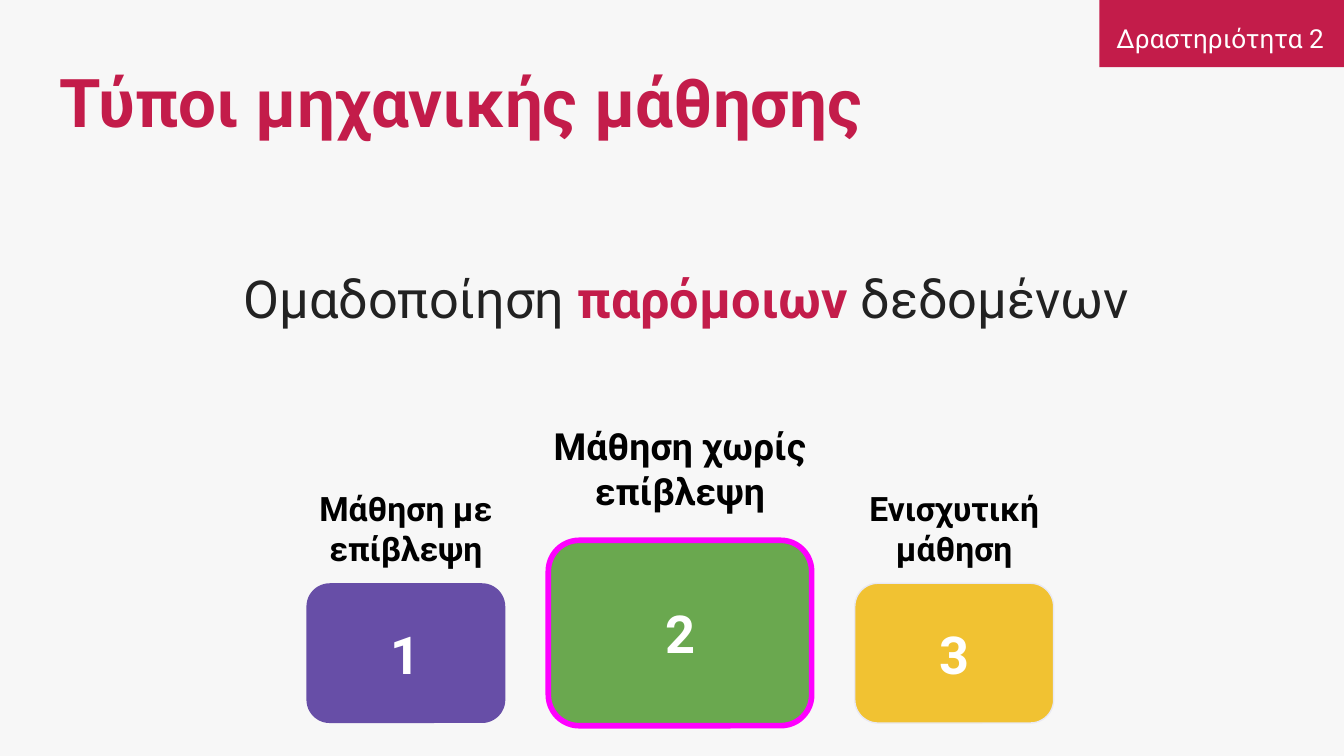
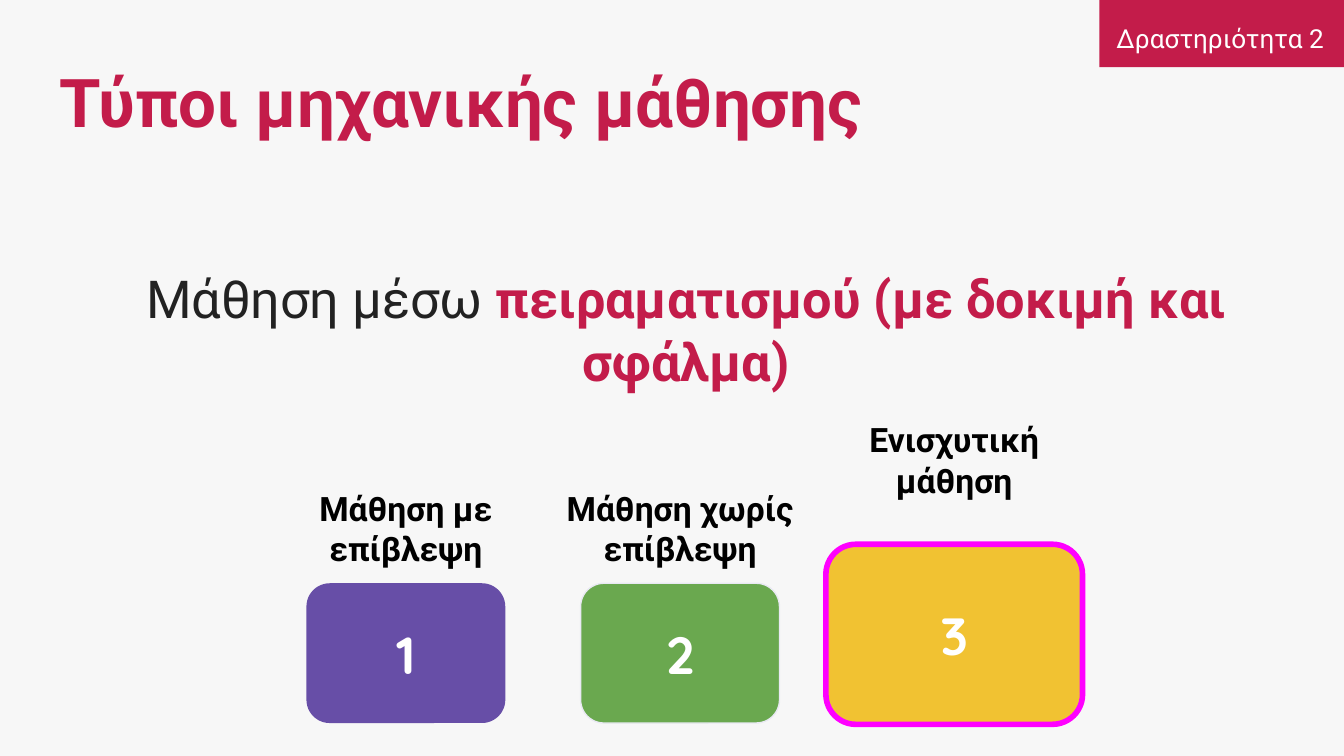
from pptx import Presentation
from pptx.dml.color import RGBColor
from pptx.enum.shapes import MSO_SHAPE
from pptx.enum.text import MSO_ANCHOR, MSO_AUTO_SIZE, PP_ALIGN
from pptx.util import Inches, Pt

# Colours and fonts
PAPER = RGBColor(0xF7, 0xF7, 0xF7)
CRIMSON = RGBColor(0xC3, 0x1C, 0x4A)
INK = RGBColor(0x22, 0x22, 0x22)
BLACK = RGBColor(0x00, 0x00, 0x00)
WHITE = RGBColor(0xFF, 0xFF, 0xFF)
PURPLE = RGBColor(0x67, 0x4E, 0xA7)
GREEN = RGBColor(0x6A, 0xA8, 0x4F)
YELLOW = RGBColor(0xF1, 0xC2, 0x32)
PALE = RGBColor(0xE9, 0xE9, 0xF3)
MAGENTA = RGBColor(0xFF, 0x00, 0xFF)
FONT = "Roboto"

# Content
TITLE = "Τύποι μηχανικής μάθησης"
TAG = "Δραστηριότητα 2"
TYPES = [  # label, fill, outline, label width
    ("Μάθηση με επίβλεψη", PURPLE, None, 1.74),
    ("Μάθηση χωρίς επίβλεψη", GREEN, PALE, 1.95),
    ("Ενισχυτική μάθηση", YELLOW, PALE, 2.11),
]
SLIDES = [  # statement: (text, emphasised); card: top, size; label: top, size, points
    {
        "statement": [("Ομαδοποίηση ", False), ("παρόμοιων", True), (" δεδομένων", False)],
        "active": 1, "card": (4.02, 1.96, 1.38), "label": (3.05, 2.6, 0.88, 20),
        "number_font": FONT,
    },
    {
        "statement": [("Μάθηση μέσω ", False),
                      ("πειραματισμού (με δοκιμή και σφάλμα)", True)],
        "active": 2, "card": (4.05, 1.91, 1.34), "label": (3.02, 2.21, 0.81, 18),
        "number_font": "Quicksand",
    },
]

# Card row
FIRST_CENTER, PITCH = 3.02, 2.04
CARD = (4.34, 1.48, 1.04)
LABEL_TOP, LABEL_HEIGHT, LABEL_SIZE = 3.53, 0.81, 18


def set_frame(tf, anchor=MSO_ANCHOR.TOP, auto_size=MSO_AUTO_SIZE.NONE):
    tf.word_wrap = True
    tf.auto_size = auto_size
    tf.vertical_anchor = anchor
    tf.margin_left = tf.margin_right = tf.margin_top = tf.margin_bottom = Inches(0.1)


def add_run(p, text, size, color, bold=True, font=FONT):
    r = p.add_run()
    r.text = text
    r.font.name, r.font.size, r.font.bold = font, Pt(size), bold
    r.font.color.rgb = color


def add_box(slide, shape, x, y, w, h, fill, outline=None, weight=0.75):
    sp = slide.shapes.add_shape(shape, Inches(x), Inches(y), Inches(w), Inches(h))
    sp.shadow.inherit = False
    sp.fill.solid()
    sp.fill.fore_color.rgb = fill
    if outline is None:
        sp.line.fill.background()
    else:
        sp.line.color.rgb = outline
        sp.line.width = Pt(weight)
    return sp


def add_text(slide, x, y, w, h, text, size, color, bold=True,
             auto_size=MSO_AUTO_SIZE.NONE):
    sp = slide.shapes.add_textbox(Inches(x), Inches(y), Inches(w), Inches(h))
    set_frame(sp.text_frame, auto_size=auto_size)
    p = sp.text_frame.paragraphs[0]
    p.alignment = PP_ALIGN.CENTER
    add_run(p, text, size, color, bold)
    return p


def add_title(slide, statement):
    title = slide.shapes.title
    title.left, title.top = Inches(0.34), Inches(0.35)
    title.width, title.height = Inches(9.53), Inches(4.93)
    tf = title.text_frame
    set_frame(tf)
    p = tf.paragraphs[0]
    p.alignment = PP_ALIGN.LEFT
    add_run(p, TITLE, 36, CRIMSON)
    p = tf.add_paragraph()
    p.alignment = PP_ALIGN.CENTER
    p.space_before = Pt(67)
    for text, strong in statement:
        add_run(p, text, 28, CRIMSON if strong else INK, strong)


def add_tag(slide):
    p = add_text(slide, 8.16, 0.03, 1.84, 0.42, TAG, 14, WHITE, bold=False)
    p.line_spacing = 1.15
    p.space_after = Pt(16)


def add_cards(slide, data):
    for i, (label, fill, outline, label_w) in enumerate(TYPES):
        center = FIRST_CENTER + i * PITCH
        (y, w, h), weight = CARD, 0.75
        label_y, label_h, size = LABEL_TOP, LABEL_HEIGHT, LABEL_SIZE
        if i == data["active"]:
            (y, w, h), weight = data["card"], 3
            label_y, label_w, label_h, size = data["label"]
            outline = MAGENTA
        sp = add_box(slide, MSO_SHAPE.ROUNDED_RECTANGLE, center - w / 2, y, w, h,
                     fill, outline, weight)
        set_frame(sp.text_frame, MSO_ANCHOR.MIDDLE)
        p = sp.text_frame.paragraphs[0]
        p.alignment = PP_ALIGN.CENTER
        add_run(p, str(i + 1), 28, WHITE, font=data["number_font"])
        add_text(slide, center - label_w / 2, label_y, label_w, label_h, label, size,
                 BLACK, auto_size=MSO_AUTO_SIZE.SHAPE_TO_FIT_TEXT)


def main():
    prs = Presentation()
    prs.slide_width, prs.slide_height = Inches(10), Inches(10 * 9 / 16)
    background = prs.slide_master.background.fill
    background.solid()
    background.fore_color.rgb = PAPER
    for data in SLIDES:
        slide = prs.slides.add_slide(prs.slide_layouts[5])
        # Corner band, then title, cards and tag
        add_box(slide, MSO_SHAPE.RECTANGLE, 8.18, 0, 1.82, 0.5, CRIMSON)
        add_title(slide, data["statement"])
        add_cards(slide, data)
        add_tag(slide)
    prs.save("out.pptx")


if __name__ == "__main__":
    main()
